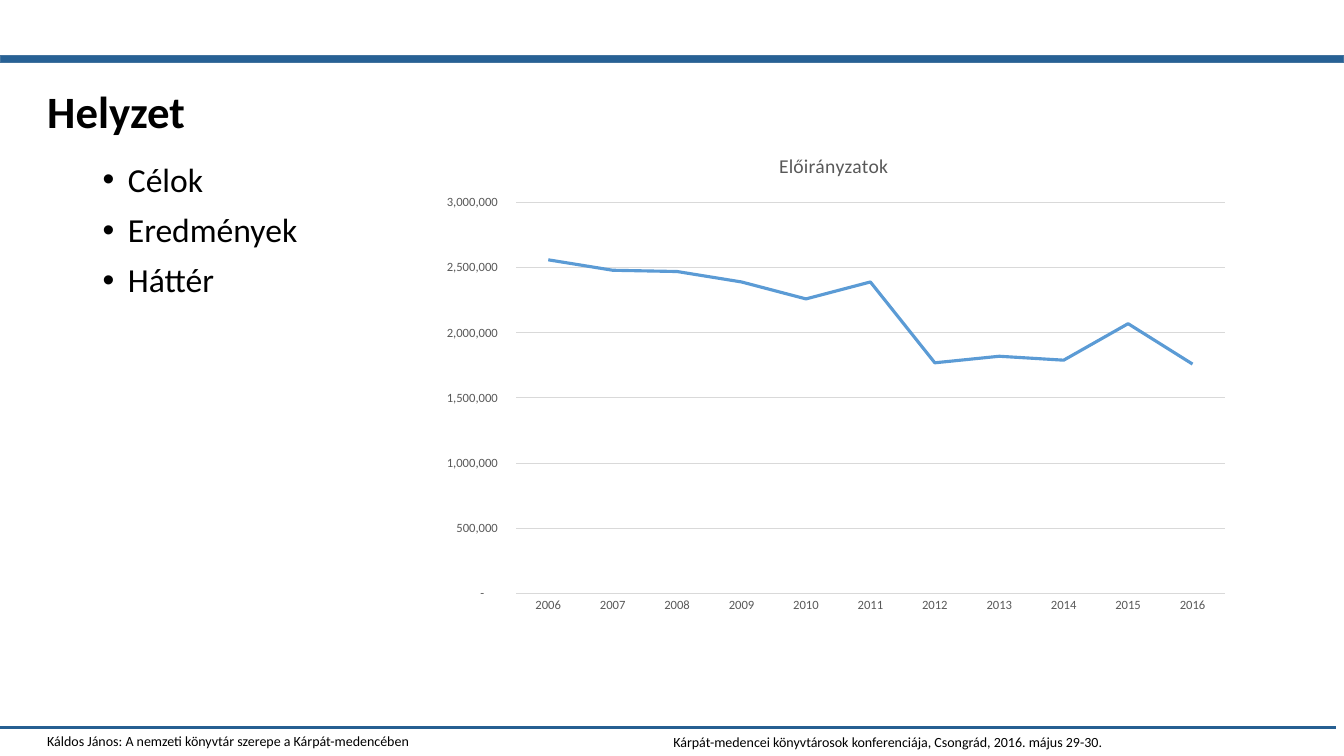
"""Build the "Helyzet" slide with a bullet list and a line chart of yearly budgets."""
from lxml import etree
from pptx import Presentation
from pptx import util as u
from pptx.chart.data import CategoryChartData
from pptx.dml.color import RGBColor
from pptx.enum import chart as ch, shapes, text
from pptx.oxml import parse_xml
from pptx.oxml.ns import nsdecls, qn

TITLE = "Helyzet"
BULLETS = ["Célok", "Eredmények", "Háttér"]
FOOTERS = [
    ("Káldos János: A nemzeti könyvtár szerepe a Kárpát-medencében", (0.37, 7.22, 6.67, 0.27)),
    ("Kárpát-medencei könyvtárosok konferenciája, Csongrád, 2016. május 29-30.", (6.58, 7.23, 5.55, 0.27)),
]
CHART_TITLE = "Előirányzatok"
BUDGETS = {
    "2006": 2560000, "2007": 2480000, "2008": 2470000, "2009": 2390000,
    "2010": 2260000, "2011": 2390000, "2012": 1770000, "2013": 1820000,
    "2014": 1790000, "2015": 2070000, "2016": 1760000,
}
NUMBER_FORMAT = r'_-* #,##0\ _F_t_-;\-* #,##0\ _F_t_-;_-* "-"??\ _F_t_-;_-@_-'
PLOT_AREA = {"x": 0.11, "y": 0.14, "w": 0.87, "h": 0.8}
FONT = "Calibri"
BLACK, GRAY, GRID = "000000", "595959", "D9D9D9"


def color(value):
    return RGBColor.from_string(value)


def set_font(font, size, value, bold=False):
    font.name, font.size, font.bold = FONT, u.Pt(size), bold
    font.color.rgb = color(value)


def set_line(line, value, width):
    line.color.rgb = color(value)
    line.width = u.Pt(width)


def add_text(page, lines, place, size, bold=False, spacing=1.0, before=0, bullet=False,
             anchor=text.MSO_ANCHOR.TOP):
    frame = page.shapes.add_textbox(*map(u.Inches, place)).text_frame
    frame.word_wrap = True
    frame.vertical_anchor = anchor
    frame.text = "\n".join(lines)
    for index, para in enumerate(frame.paragraphs):
        para.line_spacing = spacing
        para.space_before = u.Pt(before if index else 0)
        if bullet:
            props = para._p.get_or_add_pPr()
            props.set("marL", str(u.Inches(0.25)))
            props.set("indent", str(u.Inches(-0.25)))
            etree.SubElement(props, qn("a:buFont"), typeface="Arial")
            etree.SubElement(props, qn("a:buChar"), char="•")
        set_font(para.font, size, BLACK, bold)


def add_rules(page):
    band = page.shapes.add_shape(shapes.MSO_SHAPE.RECTANGLE, 0, u.Inches(0.55),
                                 u.Inches(13.33), u.Inches(0.07))
    band.shadow.inherit = False
    band.fill.solid()
    band.fill.fore_color.rgb = color("276195")
    set_line(band.line, "43739E", 1)
    rule = page.shapes.add_connector(shapes.MSO_CONNECTOR.STRAIGHT, u.Inches(-0.09),
                                     u.Inches(7.22), u.Inches(13.25), u.Inches(7.22))
    set_line(rule.line, "265F92", 2.25)
    etree.SubElement(rule._element.spPr, qn("a:effectLst"))


def add_budget_chart(page):
    data = CategoryChartData()
    data.categories = list(BUDGETS)
    data.add_series(CHART_TITLE, list(BUDGETS.values()))
    place = map(u.Inches, (4.23, 1.33, 8.08, 4.85))
    chart = page.shapes.add_chart(ch.XL_CHART_TYPE.LINE, *place, data).chart
    set_font(chart.font, 10, BLACK)
    chart.has_legend = False
    chart.has_title = True
    chart.chart_title.include_in_layout = False
    heading = chart.chart_title.text_frame
    heading.text = CHART_TITLE
    set_font(heading.paragraphs[0].font, 14, GRAY)

    plot = chart.plots[0]
    plot.vary_by_categories = False
    series = plot.series[0]
    series.smooth = False
    series.marker.style = ch.XL_MARKER_STYLE.NONE
    set_line(series.format.line, "5B9BD5", 2.25)

    for axis in (chart.category_axis, chart.value_axis):
        axis.major_tick_mark = axis.minor_tick_mark = ch.XL_TICK_MARK.NONE
        set_font(axis.tick_labels.font, 9, GRAY)
    set_line(chart.category_axis.format.line, GRID, 0.75)
    values = chart.value_axis
    values.format.line.fill.background()
    values.minimum_scale, values.maximum_scale, values.major_unit = 0, 3000000, 500000
    values.tick_labels.number_format = NUMBER_FORMAT
    values.tick_labels.number_format_is_linked = False
    set_line(values.major_gridlines.format.line, GRID, 0.75)

    area = chart._chartSpace.chart.plotArea
    for old in area.findall(qn("c:layout")):
        area.remove(old)
    sizes = "".join(f'<c:{key} val="{size}"/>' for key, size in PLOT_AREA.items())
    area.insert(0, parse_xml(
        f'<c:layout {nsdecls("c")}><c:manualLayout><c:layoutTarget val="inner"/>'
        f'<c:xMode val="edge"/><c:yMode val="edge"/>{sizes}</c:manualLayout></c:layout>'))


def main():
    deck = Presentation()
    deck.slide_width, deck.slide_height = u.Inches(13.33), u.Inches(7.5)
    page = deck.slides.add_slide(deck.slide_layouts[6])
    add_rules(page)
    for footer, place in FOOTERS:
        add_text(page, [footer], place, 10)
    add_text(page, [TITLE], (0.37, 0.81, 12.58, 0.65), 32, bold=True, spacing=0.9,
             anchor=text.MSO_ANCHOR.MIDDLE)
    add_text(page, BULLETS, (0.92, 1.57, 11.5, 5.19), 24, spacing=0.9, before=10, bullet=True)
    add_budget_chart(page)
    deck.save("out.pptx")


if __name__ == "__main__":
    main()
